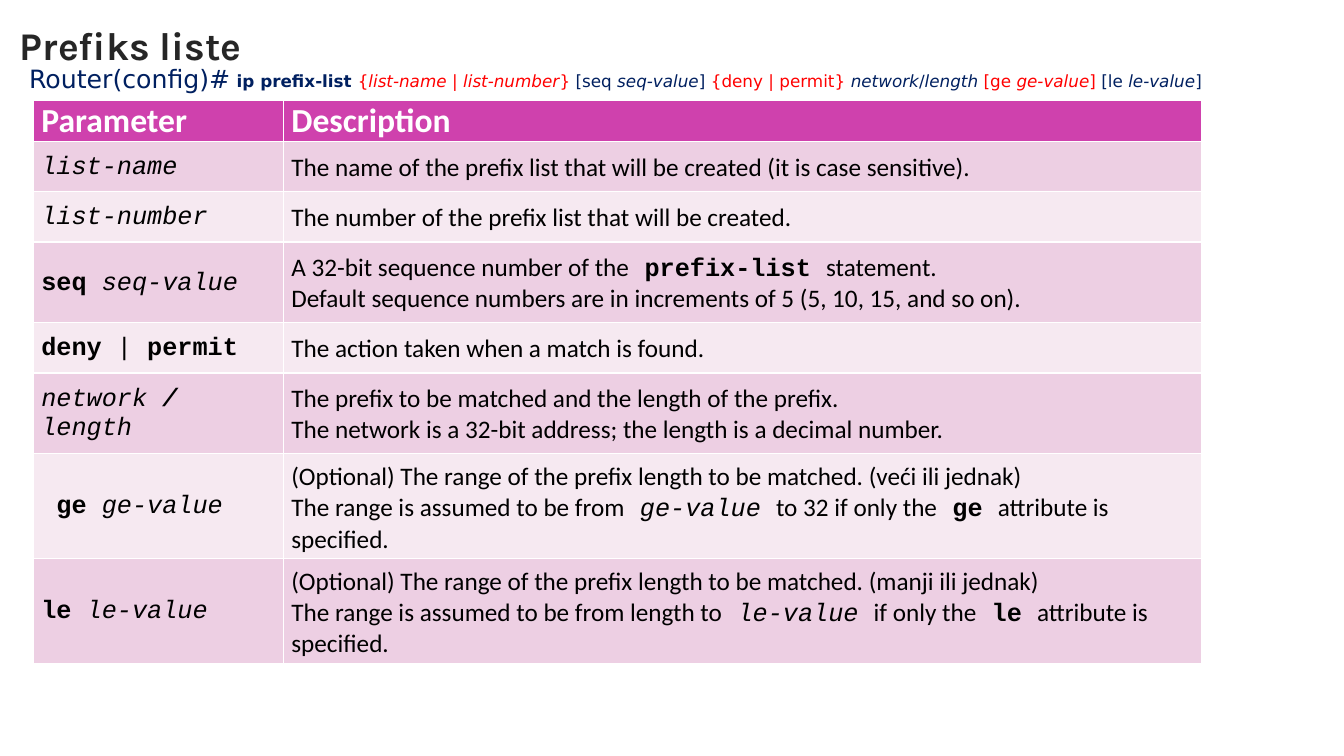
import dataclasses
import typing

import pptx
import pptx.dml.color
import pptx.enum.text
import pptx.slide
import pptx.text.text
import pptx.util

Inches = pptx.util.Inches
MIDDLE = pptx.enum.text.MSO_ANCHOR.MIDDLE


@dataclasses.dataclass(frozen=True)
class Theme:
    ink: str = "000000"
    white: str = "FFFFFF"
    title: str = "262626"
    navy: str = "002060"
    red: str = "FF0000"
    head: str = "CF41AD"
    bands: tuple[str, str] = ("EDCFE3", "F6E9F1")
    sans: str = "Calibri"
    mono: str = "Courier New"
    shell: str = "DejaVu Sans"
    brand: str = "Karla"
    title_size: int = 28
    head_size: int = 24
    body_size: int = 18
    code_size: int = 12


THEME = Theme()


class Look(typing.NamedTuple):
    name: str
    size: int
    tint: str
    bold: bool = False
    italic: bool = False


class Run(typing.NamedTuple):
    text: str
    look: Look


class Label(typing.NamedTuple):
    left: float
    top: float
    width: float
    height: float
    runs: list[Run]
    anchor: pptx.enum.text.MSO_ANCHOR = pptx.enum.text.MSO_ANCHOR.TOP
    spacing: float = 1.0


class Entry(typing.NamedTuple):
    height: float
    term: list[Run]
    lines: list[list[Run]]


TITLE = Look(THEME.brand, THEME.title_size, THEME.title, bold=True)
PROMPT = Look(THEME.shell, THEME.body_size, THEME.navy)
HEAD = Look(THEME.sans, THEME.head_size, THEME.white, bold=True)
BODY = Look(THEME.sans, THEME.body_size, THEME.ink)
MONO = Look(THEME.mono, THEME.body_size, THEME.ink)
KEY = MONO._replace(bold=True)
VALUE = MONO._replace(italic=True)
NAVY = Look(THEME.shell, THEME.code_size, THEME.navy)
NAVY_VALUE = NAVY._replace(italic=True)
RED = NAVY._replace(tint=THEME.red)
RED_VALUE = RED._replace(italic=True)

LABELS = [
    Label(0.1, 0.12, 10.47, 0.71, [Run("Prefiks liste", TITLE)], MIDDLE, 0.9),
    Label(0.19, 0.58, 10.47, 0.41, [Run("Router(config)#", PROMPT)]),
    Label(2.25, 0.65, 10, 0.65, [
        Run("ip prefix-list ", NAVY._replace(bold=True)),
        Run("{", RED), Run("list-name ", RED_VALUE),
        Run("| ", RED), Run("list-number", RED_VALUE), Run("} ", RED),
        Run("[seq ", NAVY), Run("seq-value", NAVY_VALUE), Run("] ", NAVY),
        Run("{deny | permit} ", RED),
        Run("network", NAVY_VALUE), Run("/", NAVY), Run("length ", NAVY_VALUE),
        Run("[ge ", RED), Run("ge-value", RED_VALUE), Run("] ", RED),
        Run("[le ", NAVY), Run("le-value", NAVY_VALUE), Run("]", NAVY),
    ]),
]

COLUMNS = (2.48, 9.11)
HEADER = Entry(0.37, [Run("Parameter", HEAD)], [[Run("Description", HEAD)]])
ENTRIES = [
    Entry(0.5, [Run("list-name", VALUE)], [
        [Run("The name of the prefix list that will be created (it is case sensitive).", BODY)],
    ]),
    Entry(0.5, [Run("list-number", VALUE)], [
        [Run("The number of the prefix list that will be created.", BODY)],
    ]),
    Entry(0.8, [Run("seq ", KEY), Run("seq-value", VALUE)], [
        [Run("A 32-bit sequence number of the", BODY), Run(" prefix-list ", KEY),
         Run("statement.", BODY)],
        [Run("Default sequence numbers are in increments of 5 (5, 10, 15, and so on).", BODY)],
    ]),
    Entry(0.5, [Run("deny ", KEY), Run("| ", VALUE), Run("permit", KEY)], [
        [Run("The action taken when a match is found.", BODY)],
    ]),
    Entry(0.8, [Run("network ", VALUE), Run("/ ", VALUE._replace(bold=True)),
                Run("length", VALUE)], [
        [Run("The prefix to be matched and the length of the prefix.", BODY)],
        [Run("The network is a 32-bit address; the length is a decimal number.", BODY)],
    ]),
    Entry(0.8, [Run(" ", VALUE), Run("ge ", KEY), Run("ge-value", VALUE)], [
        [Run("(Optional) The range of the prefix length to be matched. (veći ili jednak)", BODY)],
        [Run("The range is assumed to be from", BODY), Run(" ge-value ", VALUE),
         Run("to 32 if only the", BODY), Run(" ge ", KEY),
         Run("attribute is specified.", BODY)],
    ]),
    Entry(0.8, [Run("le ", KEY), Run("le-value", VALUE)], [
        [Run("(Optional) The range of the prefix length to be matched. (manji ili jednak)", BODY)],
        [Run("The range is assumed to be from length to", BODY), Run(" le-value ", VALUE),
         Run("if only the", BODY), Run(" le ", KEY),
         Run("attribute is specified.", BODY)],
    ]),
]


def tint(code: str) -> pptx.dml.color.RGBColor:
    return pptx.dml.color.RGBColor.from_string(code)


def write(frame: pptx.text.text.TextFrame, lines: list[list[Run]], spacing: float = 1.0) -> None:
    """Fill the frame with one paragraph per line of runs."""
    for index, line in enumerate(lines):
        para = frame.add_paragraph() if index else frame.paragraphs[0]
        if spacing != 1:
            para.line_spacing = spacing
        for part in line:
            run = para.add_run()
            run.text = part.text
            style = part.look._asdict()
            style["size"] = pptx.util.Pt(style["size"])
            run.font.color.rgb = tint(style.pop("tint"))
            for name, value in style.items():
                setattr(run.font, name, value)


def draw_label(slide: pptx.slide.Slide, label: Label) -> None:
    frame = slide.shapes.add_textbox(*map(Inches, label[:4])).text_frame
    for name, value in {"word_wrap": True, "vertical_anchor": label.anchor}.items():
        setattr(frame, name, value)
    write(frame, [label.runs], label.spacing)


def draw_table(slide: pptx.slide.Slide) -> None:
    rows = [HEADER, *ENTRIES]
    height = sum(entry.height for entry in rows)
    table = slide.shapes.add_table(
        len(rows), len(COLUMNS), Inches(0.33), Inches(1),
        Inches(sum(COLUMNS)), Inches(height)).table
    for column, width in zip(table.columns, COLUMNS):
        column.width = Inches(width)
    for index, entry in enumerate(rows):
        table.rows[index].height = Inches(entry.height)
        fill = THEME.bands[(index - 1) % 2] if index else THEME.head
        layout = {
            "vertical_anchor": MIDDLE,
            "margin_left": Inches(0.08),
            "margin_right": Inches(0.08),
            "margin_top": Inches(0.08 if index else 0),
            "margin_bottom": Inches(0.06 if index else 0),
        }
        for cell, lines in zip(table.rows[index].cells, ([entry.term], entry.lines)):
            for name, value in layout.items():
                setattr(cell, name, value)
            cell.fill.solid()
            cell.fill.fore_color.rgb = tint(fill)
            write(cell.text_frame, lines)


def main() -> None:
    deck = pptx.Presentation()
    deck.slide_width, deck.slide_height = Inches(13.33), Inches(7.5)
    slide = deck.slides.add_slide(deck.slide_layouts[6])
    for label in LABELS:
        draw_label(slide, label)
    draw_table(slide)
    deck.save("out.pptx")


if __name__ == "__main__":
    main()
